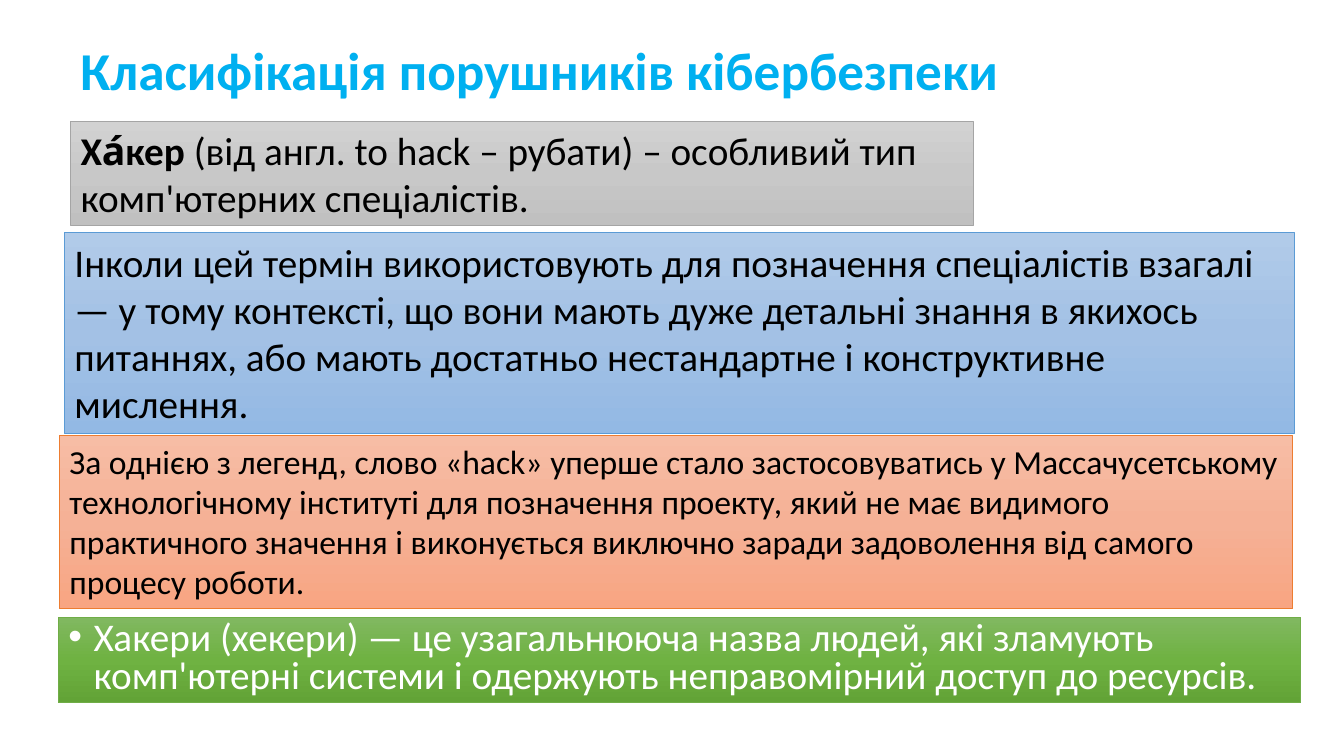
from copy import deepcopy

from lxml import etree
from pptx import Presentation
from pptx import util as u
from pptx.dml.color import RGBColor
from pptx.enum import shapes, text
from pptx.oxml.ns import qn

FONT = "Calibri"
TITLE_BOX = (0.7, 0.18, 12.64, 1.09)
TITLE = "Класифікація порушників кібербезпеки"
PANELS = [
    dict(box=(0.7, 1.2, 8.95, 1.04), stops=("D2D2D2", "C8C8C8", "C0C0C0"), border="A5A5A5",
         runs=[("Ха́кер", True),
               (" (від англ. to hack – рубати) – особливий тип комп'ютерних спеціалістів.", False)]),
    dict(box=(0.64, 2.31, 12.2, 1.99), stops=("B1CBE9", "A3C1E5", "93B9E4"), border="5B9BD5",
         runs=[("Інколи цей термін використовують для позначення спеціалістів взагалі — у тому "
                "контексті, що вони мають дуже детальні знання в якихось питаннях, або мають "
                "достатньо нестандартне і конструктивне мислення.", False)]),
    dict(box=(0.59, 4.32, 12.23, 1.72), stops=("F7BDA5", "F5B196", "F8A582"), border="ED7D31",
         size=24,
         runs=[("За однією з легенд, слово «hack» уперше стало застосовуватись у Массачусетському "
                "технологічному інституті для позначення проекту, який не має видимого практичного "
                "значення і виконується виключно заради задоволення від самого процесу роботи.", False)]),
]
SUMMARY = dict(
    box=(0.58, 6.12, 12.32, 0.85), stops=("81B861", "6FB242", "62A336"), border="70AD47",
    color="FFFFFF", grow=False,
    runs=[("Хакери (хекери) — це узагальнююча назва людей, які зламують комп'ютерні системи "
           "і одержують неправомірний доступ до ресурсів.", False)])


def rgb(value):
    return RGBColor.from_string(value)


def inches(box):
    return [u.Inches(length) for length in box]


def add_run(paragraph, words, size, color, bold):
    run = paragraph.add_run()
    run.text = words
    run.font.name = FONT
    run.font.size = u.Pt(size)
    run.font.bold = bold
    run.font.color.rgb = rgb(color)


def fill_gradient(shape, colors):
    shape.fill.gradient()
    shape.fill.gradient_angle = 270
    stop_list = shape._element.spPr.find(qn("a:gradFill")).find(qn("a:gsLst"))
    stop_list.insert(1, deepcopy(stop_list[0]))
    for index, (stop, color) in enumerate(zip(shape.fill.gradient_stops, colors)):
        stop.position = index / (len(colors) - 1)
        stop.color.rgb = rgb(color)


def add_title(slide, box, words):
    frame = slide.shapes.add_textbox(*inches(box)).text_frame
    frame.word_wrap = True
    frame.vertical_anchor = text.MSO_ANCHOR.MIDDLE
    paragraph = frame.paragraphs[0]
    paragraph.line_spacing = 0.9
    add_run(paragraph, words, 38, "00B0F0", True)


def add_panel(slide, box, stops, border, runs, size=28, color="000000", grow=True):
    shape = slide.shapes.add_shape(shapes.MSO_SHAPE.RECTANGLE, *inches(box))
    shape.shadow.inherit = False
    fill_gradient(shape, stops)
    shape.line.color.rgb = rgb(border)
    shape.line.width = u.Pt(0.5)
    frame = shape.text_frame
    frame.word_wrap = True
    frame.vertical_anchor = text.MSO_ANCHOR.TOP
    if grow:
        frame.auto_size = text.MSO_AUTO_SIZE.SHAPE_TO_FIT_TEXT
    paragraph = frame.paragraphs[0]
    paragraph.alignment = text.PP_ALIGN.LEFT
    for words, bold in runs:
        add_run(paragraph, words, size, color, bold)
    return paragraph


def add_summary(slide, content):
    paragraph = add_panel(slide, **content)
    paragraph.line_spacing = 0.8
    paragraph.space_before = u.Pt(10)
    properties = paragraph._p.get_or_add_pPr()
    properties.set("marL", str(u.Inches(0.25)))
    properties.set("indent", str(-u.Inches(0.25)))
    etree.SubElement(properties, qn("a:buFont")).set("typeface", "Arial")
    etree.SubElement(properties, qn("a:buChar")).set("char", "•")


def main():
    presentation = Presentation()
    presentation.slide_width = u.Inches(13.33)
    presentation.slide_height = u.Inches(7.5)
    slide = presentation.slides.add_slide(presentation.slide_layouts[6])
    add_title(slide, TITLE_BOX, TITLE)
    add_summary(slide, SUMMARY)
    for panel in PANELS:
        add_panel(slide, **panel)
    presentation.save("out.pptx")


if __name__ == "__main__":
    main()
